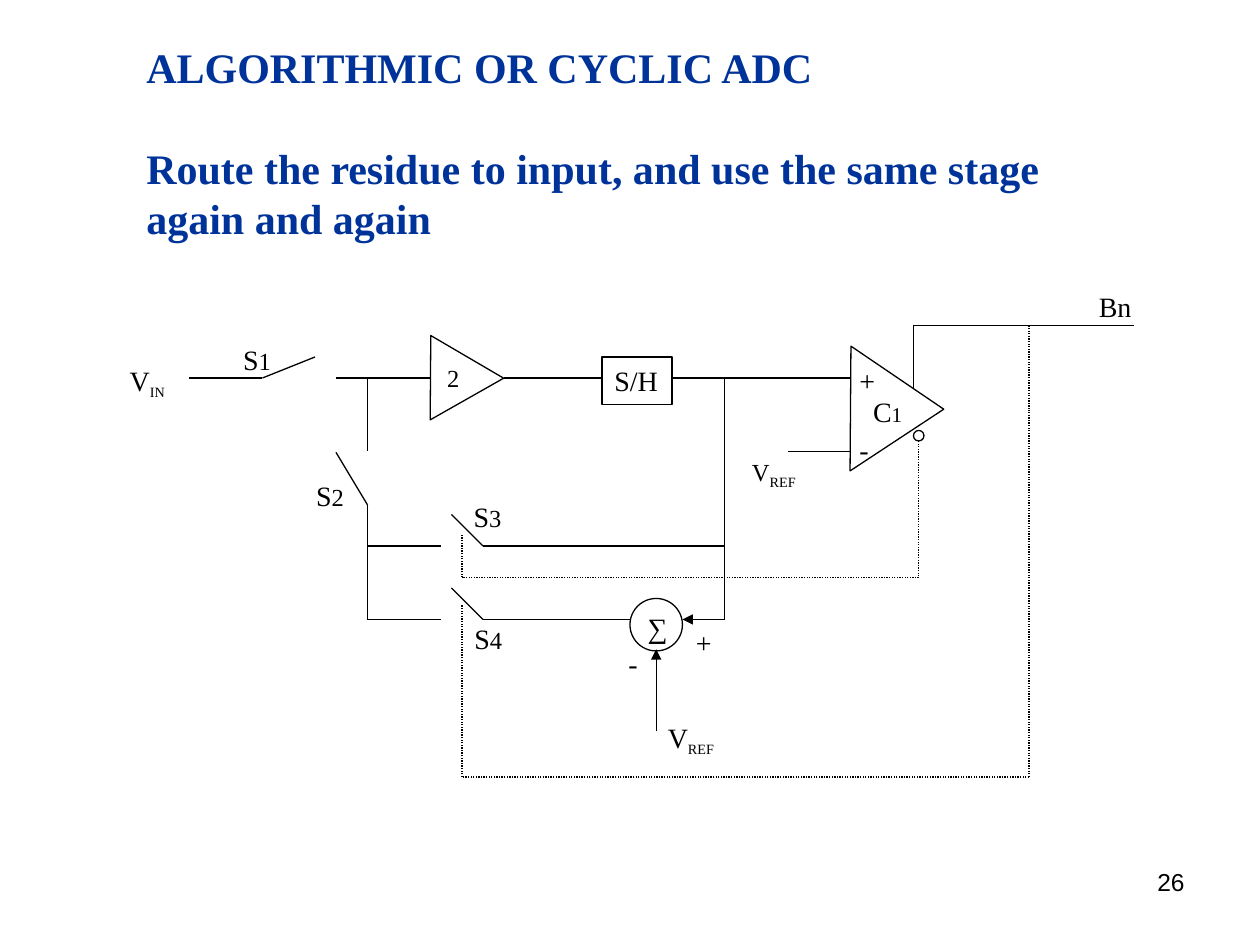
from itertools import pairwise

from lxml.etree import SubElement
from pptx import Presentation
from pptx.dml.color import RGBColor
from pptx.enum.dml import MSO_LINE as Dash
from pptx.enum.shapes import MSO_CONNECTOR as Link, MSO_SHAPE as Form
from pptx.enum.text import MSO_ANCHOR as Anchor, MSO_AUTO_SIZE as Fit, PP_ALIGN as Align
from pptx.oxml.ns import qn
from pptx.util import Pt


def color(code):
    return RGBColor.from_string(code)


class Sketch:
    face = "Times New Roman"
    ink = "000000"
    weight = 0.75

    def __init__(self, slide):
        self.slide = slide
        self.shapes = slide.shapes

    def style(self, font, size=None, face=None, ink=None, bold=None):
        font.name = face or self.face
        font.color.rgb = color(ink or self.ink)
        font.bold = bold
        if size:
            font.size = Pt(size)

    def text(self, x, y, w, h, lines, size, gap=0, align=Align.LEFT, wrap=True, **look):
        """Plain paragraphs, all in one style."""
        frame = self.shapes.add_textbox(Pt(x), Pt(y), Pt(w), Pt(h)).text_frame
        frame.word_wrap = wrap
        for i, line in enumerate(lines):
            para = frame.add_paragraph() if i else frame.paragraphs[0]
            para.text = line
            para.alignment = align
            para.space_before = Pt(gap if i else 0)
            self.style(para.font, size, **look)
        return frame

    def label(self, x, y, w, main, tail="", size=16, small=14, sub=False):
        """Short label, with an optional smaller or lowered tail."""
        frame = self.text(x, y, w, 26.5 if size > 14 else 24, [main], size, wrap=False)
        frame.auto_size = Fit.SHAPE_TO_FIT_TEXT
        if tail:
            para = frame.paragraphs[0]
            run = para.add_run()
            run.text = tail
            run.font.size = Pt(small)
            if sub:
                run.font._element.set("baseline", "-25000")

    def shape(self, form, x, y, w, h, turn=0):
        item = self.shapes.add_shape(form, Pt(x), Pt(y), Pt(w), Pt(h))
        item.shadow.inherit = False
        item.fill.background()
        item.line.color.rgb = color(self.ink)
        item.line.width = Pt(self.weight)
        item.rotation = turn
        return item

    def box(self, x, y, w, h, word, size=16):
        item = self.shape(Form.RECTANGLE, x, y, w, h)
        frame = item.text_frame
        frame.word_wrap = False
        frame.vertical_anchor = Anchor.TOP
        para = frame.paragraphs[0]
        para.text = word
        para.alignment = Align.LEFT
        self.style(para.font, size)

    def wire(self, *points, dots=False, arrow=False):
        """Straight lines through the points; the arrow is at the end."""
        for start, end in pairwise(points):
            line = self.shapes.add_connector(Link.STRAIGHT, *map(Pt, start + end))
            line.line.color.rgb = color(self.ink)
            line.line.width = Pt(self.weight)
            if dots:
                line.line.dash_style = Dash.ROUND_DOT
            props = line._element.spPr
            if arrow:
                SubElement(props.find(qn("a:ln")), qn("a:tailEnd"), type="triangle")
            SubElement(props, qn("a:effectLst"))


def main():
    deck = Presentation()
    deck.slide_width, deck.slide_height = Pt(720), Pt(540)
    art = Sketch(deck.slides.add_slide(deck.slide_layouts[6]))

    # Title
    art.text(76.5, 20.2, 536.4, 124,
             ["ALGORITHMIC OR CYCLIC ADC",
              "Route the residue to input, and use the same stage again and again"],
             24, gap=28.8, ink="003399", bold=True)

    # Comparator, gain stage, sample and hold, adder
    art.shape(Form.ISOSCELES_TRIANGLE, 477, 207, 71.3, 53.3, 90.4)
    art.shape(Form.ISOSCELES_TRIANGLE, 242.8, 195.1, 48.2, 41.8, 90.4)
    art.box(344, 204, 40, 27, "S/H")
    art.shape(Form.OVAL, 360, 342, 30, 30)
    art.shape(Form.OVAL, 522, 246, 6, 6)

    # Signal row, at the height of the input
    row = 216
    for left, right in ((108, 150), (192, 246), (288, 344), (384, 486)):
        art.wire((left, row), (right, row))
    art.wire((150, row), (180, 204))

    # Feedback through S2, S3 and S4
    art.wire((210, row), (210, 258))
    art.wire((192, 258.5), (210, 288.5), (210, 354))
    art.wire((414, row), (414, 354))
    for y, right in ((312, 414), (354, 360)):
        art.wire((210, y), (252, y))
        art.wire((258, y - 18), (276, y), (right, y))
    art.wire((414, 354), (390, 354), arrow=True)
    art.wire((375, 418), (375, 371), arrow=True)

    # Comparator reference and output
    art.wire((450, 258), (486, 258))
    art.wire((522, 222), (522, 186), (648, 186))

    # Switch control
    art.wire((525, 252), (525, 330), (264, 330), (264, 305), dots=True)
    art.wire((588, 186), (588, 234), (588, 444), (264, 444), (264, 346), dots=True)

    # Switch names
    for x, y, digit in ((131.8, 192, "1"), (173.5, 270, "2"),
                        (263.5, 282, "3"), (264, 351.5, "4")):
        art.label(x, y, 32, "S", digit)

    # Voltages
    art.label(67, 204, 36, "V", "IN", sub=True)
    art.label(374.5, 408, 44, "V", "REF", sub=True)
    art.label(422.6, 257.5, 42, "V", "REF", size=14, sub=True)

    # Signs and block names
    for x, y, w, sign in ((390.5, 354, 24, "+"), (352, 366, 20, "-"),
                          (484, 204, 24, "+"), (484, 243.5, 20, "-"),
                          (363, 345.5, 26, "∑"), (620.8, 162, 34, "Bn")):
        art.label(x, y, w, sign)
    art.label(248.4, 204, 22, "2", size=14)
    art.label(491.8, 222, 32, "C", "1", small=12)

    # Page number
    art.text(516, 492, 168, 37.5, ["26"], 14, align=Align.RIGHT, face="Arial")

    deck.save("out.pptx")


if __name__ == "__main__":
    main()
